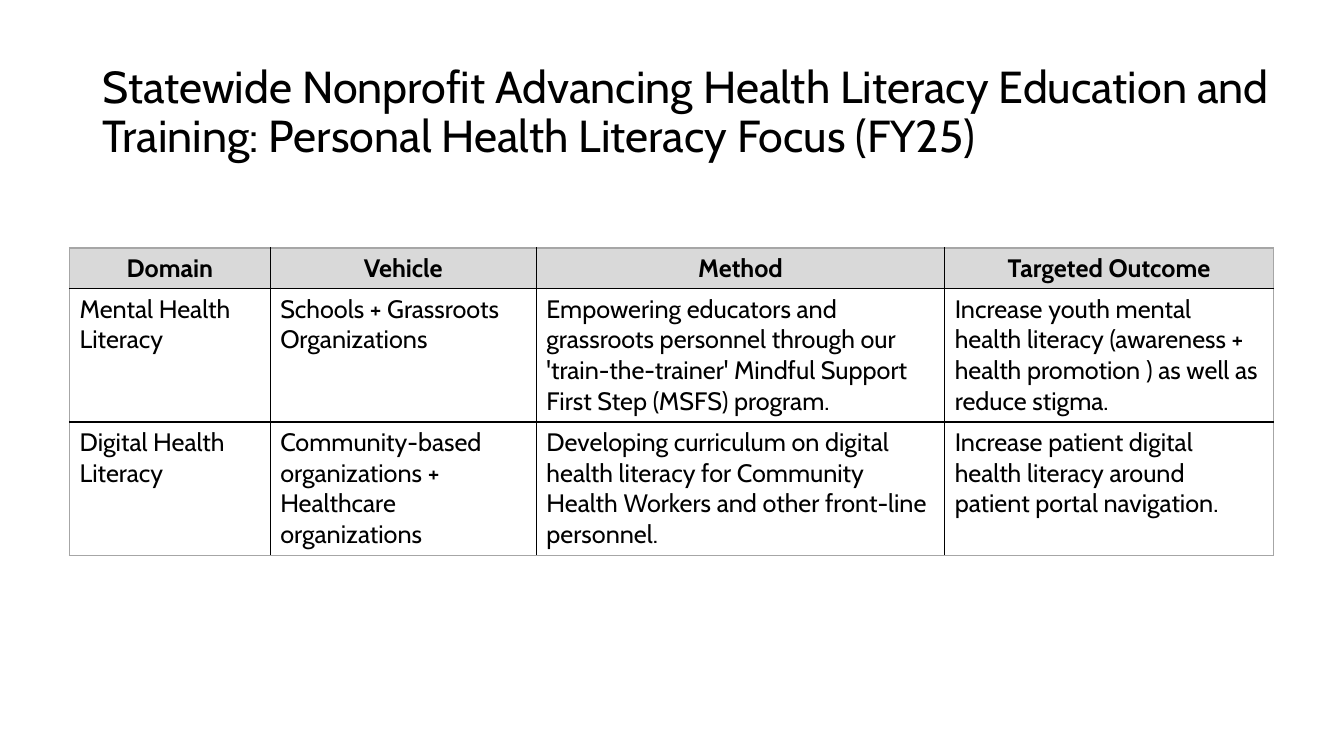
from lxml.etree import SubElement
from pptx import Presentation
from pptx.dml.color import RGBColor
from pptx.enum.text import MSO_ANCHOR, PP_ALIGN
from pptx.oxml.ns import qn
from pptx.util import Inches, Pt

BLACK = RGBColor(0x00, 0x00, 0x00)
HEADER_GRAY = RGBColor(0xD9, 0xD9, 0xD9)
FRAME_GRAY = RGBColor(0xA6, 0xA6, 0xA6)

TITLE = ("Statewide Nonprofit Advancing Health Literacy Education and Training: "
         "Personal Health Literacy Focus (FY25)")
TITLE_BOX = (0.92, 0.4, 11.95, 1.45)
TABLE_BOX = (0.69, 2.46, 11.94, 3)
COLUMN_WIDTHS = (1.99, 2.64, 4.05, 3.26)
ROW_HEIGHTS = (0.4, 1.3, 1.3)
PROGRAMS = (
    ("Domain", "Vehicle", "Method", "Targeted Outcome"),
    ("Mental Health Literacy",
     "Schools + Grassroots Organizations",
     "Empowering educators and grassroots personnel through our "
     "'train-the-trainer' Mindful Support First Step (MSFS) program.",
     "Increase youth mental health literacy (awareness + health promotion ) "
     "as well as reduce stigma."),
    ("Digital Health Literacy",
     "Community-based organizations + Healthcare organizations",
     "Developing curriculum on digital health literacy for Community Health "
     "Workers and other front-line personnel.",
     "Increase patient digital health literacy around patient portal navigation."),
)


def set_attributes(target, values):
    for name, value in values.items():
        setattr(target, name, value)


def write_text(text_frame, text, size, bold=False, **paragraph_format):
    paragraph = text_frame.paragraphs[0]
    paragraph.text = text
    set_attributes(paragraph, paragraph_format)
    set_attributes(paragraph.font, {"name": "Cabin", "size": Pt(size), "bold": bold})
    paragraph.font.color.rgb = BLACK


def add_border(cell, side, color):
    properties = cell._tc.get_or_add_tcPr()
    line = SubElement(properties, qn(f"a:ln{side}"), w=str(Pt(1)))
    fill = SubElement(line, qn("a:solidFill"))
    SubElement(fill, qn("a:srgbClr"), val=str(color))


def add_borders(cell, row, column):
    last_row, last_column = len(ROW_HEIGHTS) - 1, len(COLUMN_WIDTHS) - 1
    on_frame = {"L": column == 0, "R": column == last_column,
                "T": row == 0, "B": row == last_row}
    for side, outer in on_frame.items():
        add_border(cell, side, FRAME_GRAY if outer else BLACK)


def add_title(slide, box):
    text_frame = slide.shapes.add_textbox(*map(Inches, box)).text_frame
    set_attributes(text_frame, {"word_wrap": True, "vertical_anchor": MSO_ANCHOR.MIDDLE})
    write_text(text_frame, TITLE, 32, line_spacing=0.9)


def add_program_table(slide, box):
    shape = slide.shapes.add_table(len(ROW_HEIGHTS), len(COLUMN_WIDTHS), *map(Inches, box))
    table = shape.table
    set_attributes(table, {"first_row": False, "horz_banding": False})
    for column, width in zip(table.columns, COLUMN_WIDTHS):
        column.width = Inches(width)
    for row, height in zip(table.rows, ROW_HEIGHTS):
        row.height = Inches(height)
    for row, texts in enumerate(PROGRAMS):
        header = row == 0
        for column, text in enumerate(texts):
            cell = table.cell(row, column)
            add_borders(cell, row, column)
            if header:
                cell.fill.solid()
                cell.fill.fore_color.rgb = HEADER_GRAY
            else:
                cell.fill.background()
            write_text(cell.text_frame, text, 18, bold=header,
                       alignment=PP_ALIGN.CENTER if header else PP_ALIGN.LEFT)


def main():
    presentation = Presentation()
    set_attributes(presentation, {"slide_width": Inches(13.33), "slide_height": Inches(7.5)})
    slide = presentation.slides.add_slide(presentation.slide_layouts[6])
    add_program_table(slide, TABLE_BOX)
    add_title(slide, TITLE_BOX)
    presentation.save("out.pptx")


if __name__ == "__main__":
    main()
